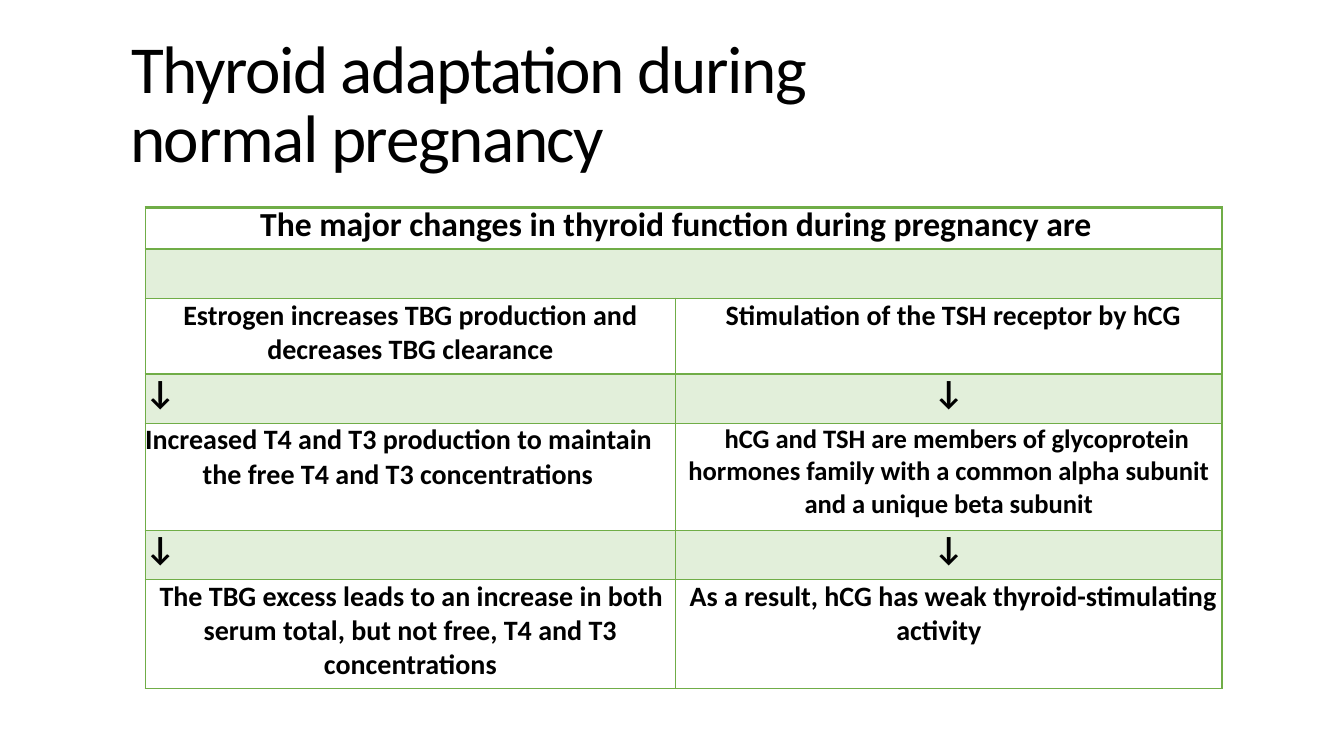
from lxml import etree
from pptx import Presentation
from pptx import util as u
from pptx.dml.color import RGBColor
from pptx.enum import text
from pptx.oxml.ns import qn

BLACK = RGBColor(0x00, 0x00, 0x00)
GREEN = RGBColor(0x70, 0xAD, 0x47)
PALE_GREEN = RGBColor(0xE2, 0xEF, 0xDA)
FONT = "Calibri"
CENTER = text.PP_ALIGN.CENTER

TITLE_BOX = (1.29, 0.31, 8.65, 1.51)
TABLE_BOX = (1.44, 2.06, 10.68, 4.77)
COLUMN_SHARES = (5.26, 5.42)
ROW_SHARES = (0.41, 0.49, 0.75, 0.49, 1.06, 0.49, 1.08)
MERGED_ROWS = (0, 1)
SHADED_ROWS = (1, 3, 5)

ARROW = "↓"
# (row, column): (paragraphs, size, alignment, left margin, first-line indent, line spacing)
CELLS = {
    (0, 0): (["The major changes in thyroid function during pregnancy are"],
             24, None, 0, 1.14, 27),
    (2, 0): (["Estrogen increases TBG production and", "decreases TBG clearance"],
             20, CENTER, 0, 0, None),
    (2, 1): (["Stimulation of the TSH receptor by hCG"], 20, CENTER, 0, 0.09, None),
    (3, 0): ([ARROW], 24, None, 0, 0, 28),
    (3, 1): ([ARROW], 24, CENTER, 0, 0, 28),
    (4, 0): (["Increased T4 and T3 production to maintain the free T4 and T3 concentrations"],
             20, None, 0.57, -0.57, None),
    (4, 1): (["hCG and TSH are members of glycoprotein hormones family with a common "
              "alpha subunit and a unique beta subunit"], 19, CENTER, 0, 0.16, None),
    (5, 0): ([ARROW], 24, None, 0, 0, 28),
    (5, 1): ([ARROW], 24, CENTER, 0, 0, 28),
    (6, 0): (["The TBG excess leads to an increase in both serum total, but not free, "
              "T4 and T3 concentrations"], 20, CENTER, 0, 0.02, None),
    (6, 1): (["As a result, hCG has weak thyroid-stimulating activity"],
             20, None, 2.19, -2.05, None),
}


def set_font(paragraph, size, bold):
    font = paragraph.font
    font.name, font.size, font.bold = FONT, u.Pt(size), bold
    font.color.rgb = BLACK


def set_indent(paragraph, margin, indent):
    properties = paragraph._p.get_or_add_pPr()
    properties.set("marL", str(u.Inches(margin)))
    properties.set("indent", str(u.Inches(indent)))


def set_borders(cell, top_width):
    properties = cell._tc.get_or_add_tcPr()
    for side, width in (("L", 1), ("R", 1), ("T", top_width), ("B", 1)):
        line = etree.SubElement(properties, qn(f"a:ln{side}"), w=str(u.Pt(width)))
        fill = etree.SubElement(line, qn("a:solidFill"))
        etree.SubElement(fill, qn("a:srgbClr"), val=str(GREEN))


def fill_title(title, box):
    title.left, title.top, title.width, title.height = map(u.Inches, box)
    frame = title.text_frame
    frame.margin_left = frame.margin_top = frame.margin_right = frame.margin_bottom = 0
    frame.word_wrap = True
    frame.auto_size = text.MSO_AUTO_SIZE.NONE
    frame.vertical_anchor = text.MSO_ANCHOR.MIDDLE
    frame.text = "Thyroid adaptation during normal pregnancy"
    paragraph = frame.paragraphs[0]
    paragraph.alignment = text.PP_ALIGN.LEFT
    paragraph.line_spacing = u.Pt(49)
    set_indent(paragraph, 0, 0.01)
    set_font(paragraph, 48, False)
    paragraph.runs[0]._r.get_or_add_rPr().set("spc", "-100")


def fill_cell(cell, paragraphs, size, alignment, margin, indent, line_spacing):
    cell.margin_left = cell.margin_top = cell.margin_right = cell.margin_bottom = 0
    cell.text = "\n".join(paragraphs)
    for paragraph in cell.text_frame.paragraphs:
        paragraph.alignment = alignment
        if line_spacing:
            paragraph.line_spacing = u.Pt(line_spacing)
        set_indent(paragraph, margin, indent)
        set_font(paragraph, size, True)


def add_changes_table(slide, box):
    left, top, width, height = map(u.Inches, box)
    table = slide.shapes.add_table(len(ROW_SHARES), len(COLUMN_SHARES),
                                   left, top, width, height).table
    table.first_row = table.horz_banding = False
    for column, share in zip(table.columns, COLUMN_SHARES):
        column.width = int(width * share / sum(COLUMN_SHARES))
    for row, share in zip(table.rows, ROW_SHARES):
        row.height = int(height * share / sum(ROW_SHARES))
    for row in MERGED_ROWS:
        table.cell(row, 0).merge(table.cell(row, len(COLUMN_SHARES) - 1))

    for row in range(len(ROW_SHARES)):
        for column in range(len(COLUMN_SHARES)):
            cell = table.cell(row, column)
            set_borders(cell, 2 if row == 0 else 1)
            if row in SHADED_ROWS:
                cell.fill.solid()
                cell.fill.fore_color.rgb = PALE_GREEN
            else:
                cell.fill.background()
            if (row, column) in CELLS:
                fill_cell(cell, *CELLS[row, column])


def main():
    presentation = Presentation()
    presentation.slide_width, presentation.slide_height = u.Inches(13.33), u.Inches(7.5)
    slide = presentation.slides.add_slide(presentation.slide_layouts[5])
    fill_title(slide.shapes.title, TITLE_BOX)
    add_changes_table(slide, TABLE_BOX)
    presentation.save("out.pptx")


if __name__ == "__main__":
    main()
